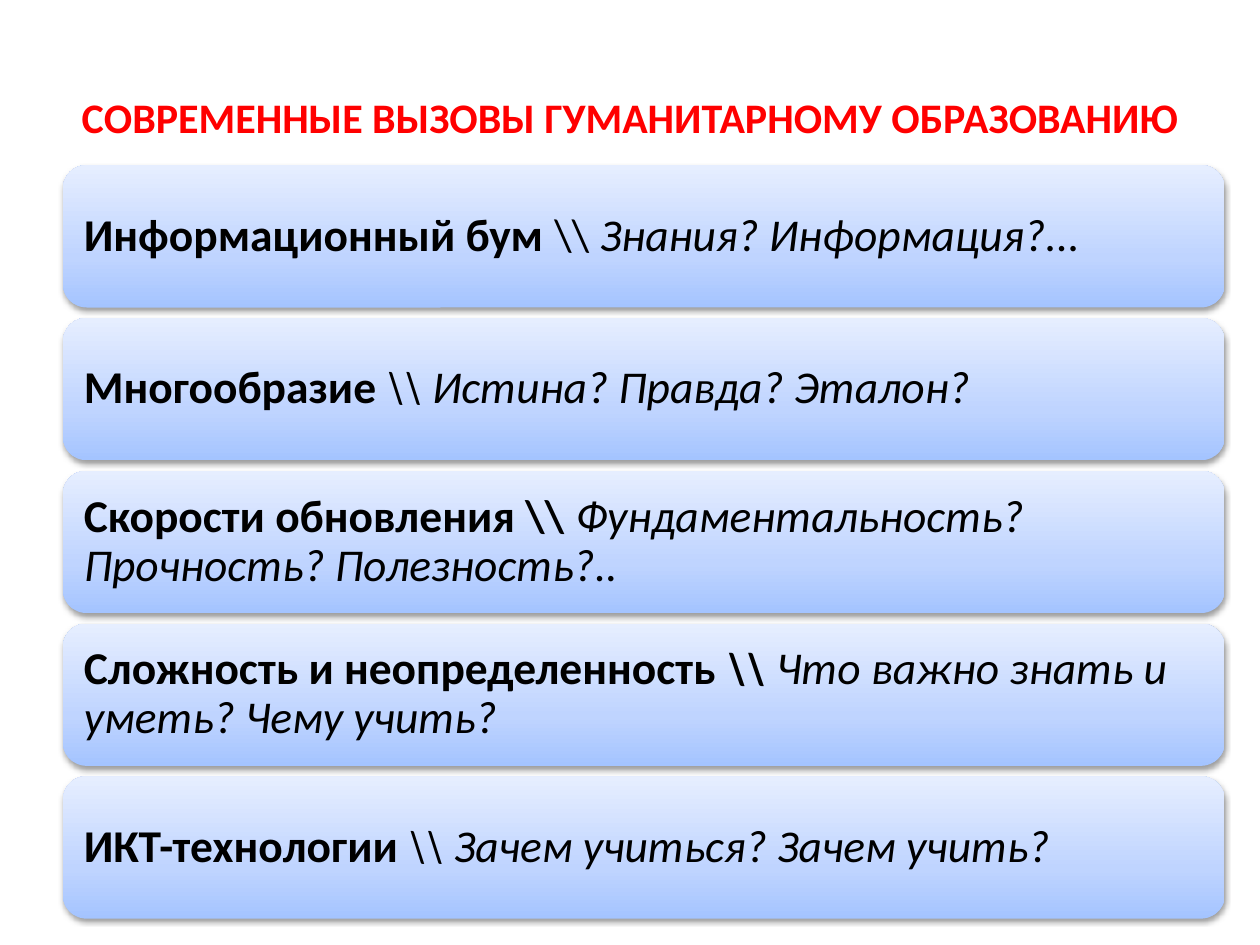
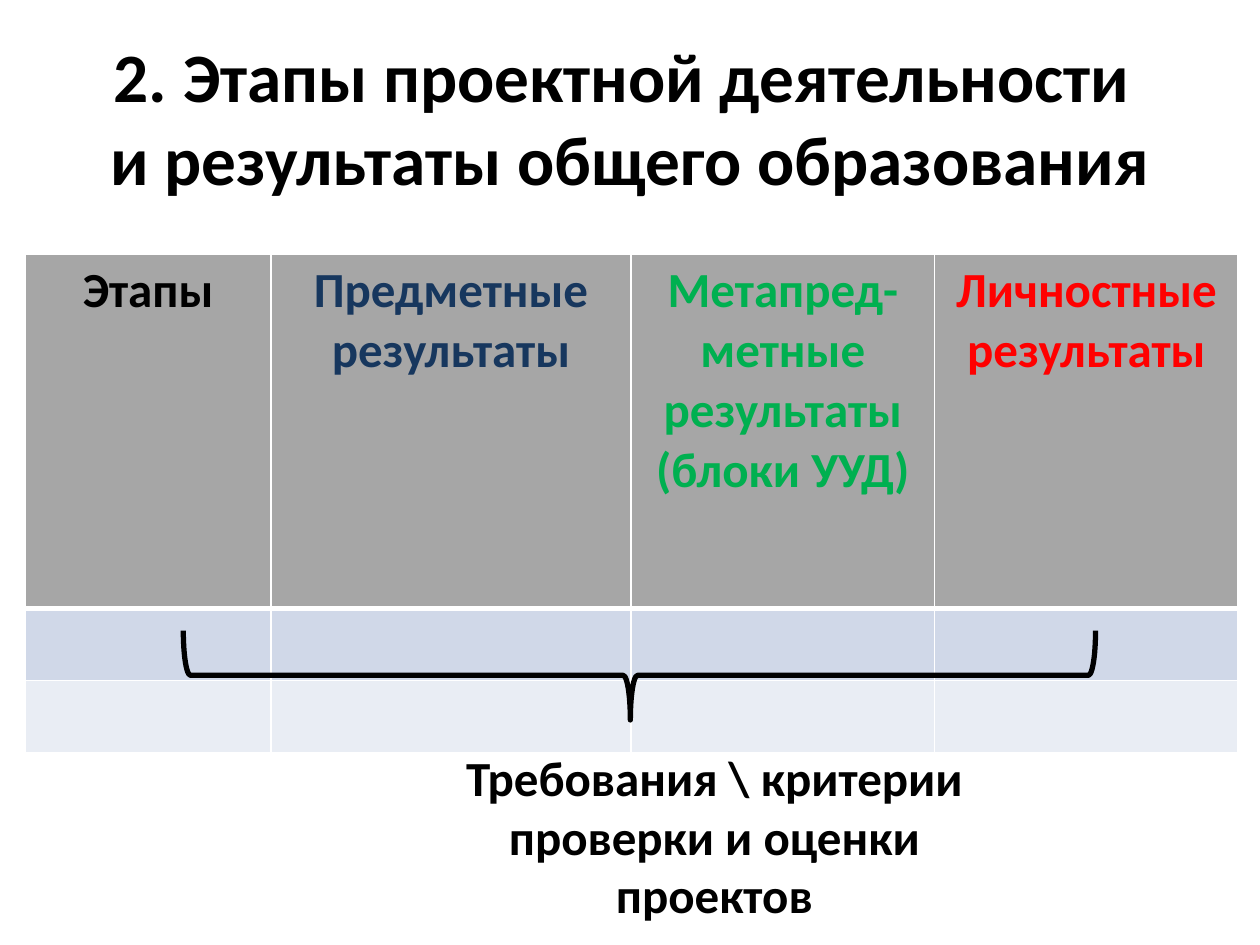
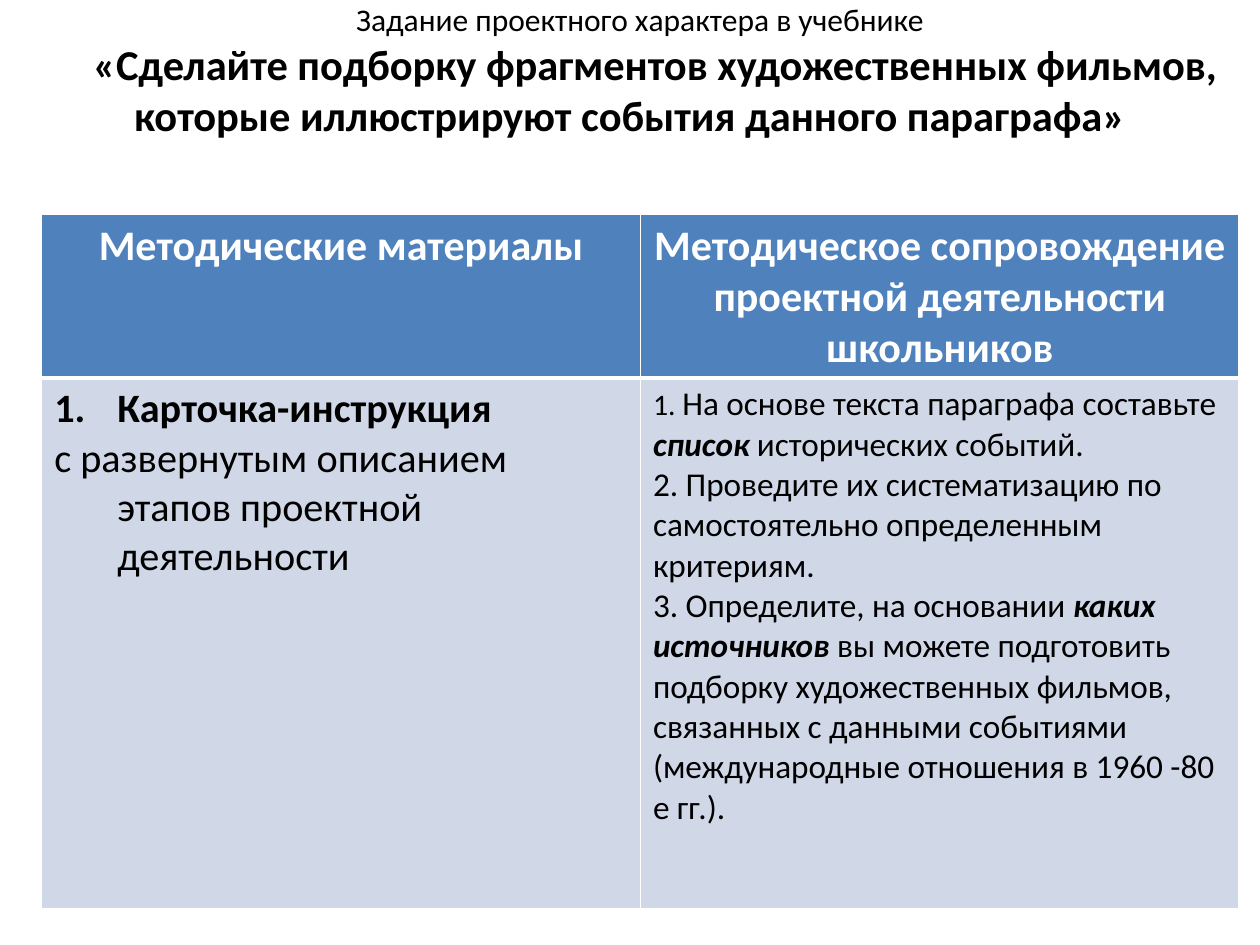
from lxml import etree
from pptx import Presentation
from pptx.dml.color import RGBColor
from pptx.enum import shapes, text
from pptx.oxml import ns, parse_xml
from pptx.util import Cm, Pt

FONT = "Calibri"
BLACK, WHITE, RED, GREEN, NAVY = "000000", "FFFFFF", "FF0000", "00B050", "17375E"
GREY, BLUE, BAND_DARK, BAND_LIGHT = "A6A6A6", "4F81BD", "D0D8E8", "E9EDF4"
CARD_GRADIENT = [(0, "A4C4FF"), (35, "BFD4FF"), (100, "E6EEFF")]
TITLE_BOX = (1.27, 0.76, 22.86, 3.18)
CENTER = text.PP_ALIGN.CENTER

# A run is (text, style letters: b bold, i italic[, size]).
CHALLENGES_TITLE = "СОВРЕМЕННЫЕ ВЫЗОВЫ ГУМАНИТАРНОМУ ОБРАЗОВАНИЮ"
CHALLENGES = [
    [("Информационный бум ", "b"), ("\\\\ ", ""), ("Знания? Информация?...", "i")],
    [("Многообразие", "b"), (" \\\\ Истина? Правда? Эталон?", "i")],
    [("Скорости обновления \\\\ ", "b"),
     ("Фундаментальность? Прочность? Полезность?..", "i")],
    [("Сложность и неопределенность ", "b"), ("\\\\ ", "bi"),
     ("Что важно знать и уметь? Чему учить?", "i")],
    [("ИКТ-технологии", "b"), (" \\\\ Зачем учиться? Зачем учить?", "i")],
]

STAGES_TITLE = ["2. Этапы проектной деятельности ", "и результаты общего образования"]
STAGES_COLUMNS = [
    (4.95, BLACK, ["Этапы"]),
    (7.26, NAVY, ["Предметные результаты"]),
    (6.12, GREEN, ["Метапред-метные результаты", "(блоки УУД)"]),
    (6.12, RED, ["Личностные результаты"]),
]
STAGES_ROWS = [(7.14, GREY), (1.45, BAND_DARK), (1.45, BAND_LIGHT)]
CRITERIA = "Требования \\ критерии проверки и оценки проектов"

TASK_INTRO = "Задание проектного характера в учебнике"
TASK_LINES = ["«Сделайте подборку фрагментов художественных фильмов,",
              "которые иллюстрируют события данного параграфа»"]
TASK_ROWS = [(3.28, BLUE), (10.69, BAND_DARK)]
TASK_HEADERS = ["Методические материалы",
                "Методическое сопровождение проектной деятельности школьников"]
CARD_ITEMS = [
    [("Карточка-инструкция", "b")],
    [("с развернутым описанием этапов проектной деятельности", "")],
]
STEPS = [
    [("1. ", "", 17), ("На основе текста параграфа составьте ", ""), ("список ", "bi"),
     ("исторических событий.", "")],
    [("2. Проведите их систематизацию по самостоятельно определенным критериям.", "")],
    [("3. Определите, на основании ", ""), ("каких источников", "bi"),
     (" вы можете подготовить подборку художественных фильмов, связанных с данными "
      "событиями (международные отношения в 1960 -80 е гг.).", "")],
]


def rgb(color):
    return RGBColor.from_string(color)


def bold(lines):
    return [[(line, "b")] for line in lines]


def write(frame, paragraphs, size, color=BLACK, align=None):
    """Fill a text frame with paragraphs, each a list of runs."""
    frame.word_wrap = True
    for number, runs in enumerate(paragraphs):
        paragraph = frame.add_paragraph() if number else frame.paragraphs[0]
        paragraph.alignment = align
        for content, style, *own_size in runs:
            run = paragraph.add_run()
            run.text = content
            run.font.name = FONT
            run.font.size = Pt(own_size[0] if own_size else size)
            run.font.bold = "b" in style
            run.font.italic = "i" in style
            run.font.color.rgb = rgb(color)
    return frame.paragraphs


def add_text(slide, box, paragraphs, size, color=BLACK, anchor=text.MSO_ANCHOR.TOP):
    frame = slide.shapes.add_textbox(*map(Cm, box)).text_frame
    frame.vertical_anchor = anchor
    write(frame, paragraphs, size, color, CENTER)
    return frame


def add_title(slide, lines, size, color=BLACK):
    add_text(slide, TITLE_BOX, bold(lines), size, color, text.MSO_ANCHOR.MIDDLE)


def indent(paragraph, left, first=0):
    properties = paragraph._p.get_or_add_pPr()
    properties.set("marL", str(Cm(left)))
    properties.set("indent", str(Cm(first)))
    return properties


def add_border(cell, side, width):
    line = etree.SubElement(cell._tc.get_or_add_tcPr(), ns.qn(f"a:ln{side}"), w=str(Pt(width)))
    fill = etree.SubElement(line, ns.qn("a:solidFill"))
    etree.SubElement(fill, ns.qn("a:srgbClr"), val=WHITE)


def add_table(slide, left, top, widths, rows):
    """Add a table with white rules, thick under the header; rows are (height, fill)."""
    table = slide.shapes.add_table(len(rows), len(widths), Cm(left), Cm(top), Cm(sum(widths)),
                                   Cm(sum(height for height, _ in rows))).table
    for column, width in zip(table.columns, widths):
        column.width = Cm(width)
    for number, (height, color) in enumerate(rows):
        table.rows[number].height = Cm(height)
        for cell in table.rows[number].cells:
            for side in "LRTB":
                under_header = (number, side) in ((0, "B"), (1, "T"))
                add_border(cell, side, 3 if under_header else 1)
            cell.fill.solid()
            cell.fill.fore_color.rgb = rgb(color)
    return table


def style_card(card):
    """Give a card its three-stop gradient and soft shadow."""
    card.line.fill.background()
    card.fill.background()
    properties = card._element.spPr
    stops = "".join(f'<a:gs pos="{position * 1000}"><a:srgbClr val="{color}"/></a:gs>'
                    for position, color in CARD_GRADIENT)
    gradient = parse_xml(f'<a:gradFill {ns.nsdecls("a")} rotWithShape="1"><a:gsLst>{stops}</a:gsLst>'
                         '<a:lin ang="16200000" scaled="0"/></a:gradFill>')
    properties.replace(properties.find(ns.qn("a:noFill")), gradient)
    properties.append(parse_xml(
        f'<a:effectLst {ns.nsdecls("a")}><a:outerShdw blurRad="{Pt(3.1)}" dist="{Pt(1.6)}" '
        f'dir="5400000" rotWithShape="0"><a:srgbClr val="{BLACK}"><a:alpha val="38000"/>'
        '</a:srgbClr></a:outerShdw></a:effectLst>'))


def build_challenges(slide):
    add_title(slide, [CHALLENGES_TITLE], 24, RED)
    top, height, pitch = 3.33, 2.87, 3.08
    for number, runs in enumerate(CHALLENGES):
        card = slide.shapes.add_shape(shapes.MSO_SHAPE.ROUNDED_RECTANGLE, Cm(1.27),
                                      Cm(top + number * pitch), Cm(23.42), Cm(height))
        style_card(card)
        frame = card.text_frame
        frame.margin_left = frame.margin_right = Cm(0.28)
        frame.vertical_anchor = text.MSO_ANCHOR.MIDDLE
        write(frame, [runs], 26, align=text.PP_ALIGN.LEFT)[0].line_spacing = 0.9


def build_stages(slide):
    add_title(slide, STAGES_TITLE, 39.6)
    widths = [width for width, _, _ in STAGES_COLUMNS]
    table = add_table(slide, 0.51, 5.13, widths, STAGES_ROWS)
    for cell, (_, color, lines) in zip(table.rows[0].cells, STAGES_COLUMNS):
        write(cell.text_frame, bold(lines), 28, color, CENTER)
    add_text(slide, (8.1, 14.94, 12.6, 3.84), bold([CRITERIA]), 28)
    brace = slide.shapes.add_shape(shapes.MSO_SHAPE.RIGHT_BRACE,
                                   Cm(11.99), Cm(4.42), Cm(1.8), Cm(18.39))
    brace.rotation = 90
    brace.adjustments[0], brace.adjustments[1] = 0.08, 0.51
    brace.shadow.inherit = False
    brace.fill.background()
    brace.line.color.rgb = rgb(BLACK)
    brace.line.width = Pt(3)


def build_task(slide):
    heading = add_text(slide, (0.38, 0, 24.64, 3.5),
                       [[(TASK_INTRO, "")], *bold(TASK_LINES)], 24.3)
    heading.margin_top = 0
    intro, first_line, _ = heading.paragraphs
    intro.runs[0].font.size = Pt(18)
    indent(intro, 0.41)
    indent(first_line, 1.02)

    table = add_table(slide, 0.84, 4.32, [12.07, 12.07], TASK_ROWS)
    for cell, header in zip(table.rows[0].cells, TASK_HEADERS):
        write(cell.text_frame, bold([header]), 24, WHITE, CENTER)
    items = write(table.cell(1, 0).text_frame, CARD_ITEMS, 23)
    numbered, _ = [indent(item, 1.27, -1.27) for item in items]
    etree.SubElement(numbered, ns.qn("a:buAutoNum"), type="arabicPeriod")
    write(table.cell(1, 1).text_frame, STEPS, 19)


def main():
    presentation = Presentation()
    presentation.slide_width, presentation.slide_height = Cm(25.4), Cm(19.05)
    for build in (build_challenges, build_stages, build_task):
        build(presentation.slides.add_slide(presentation.slide_layouts[6]))
    presentation.save("out.pptx")


if __name__ == "__main__":
    main()
